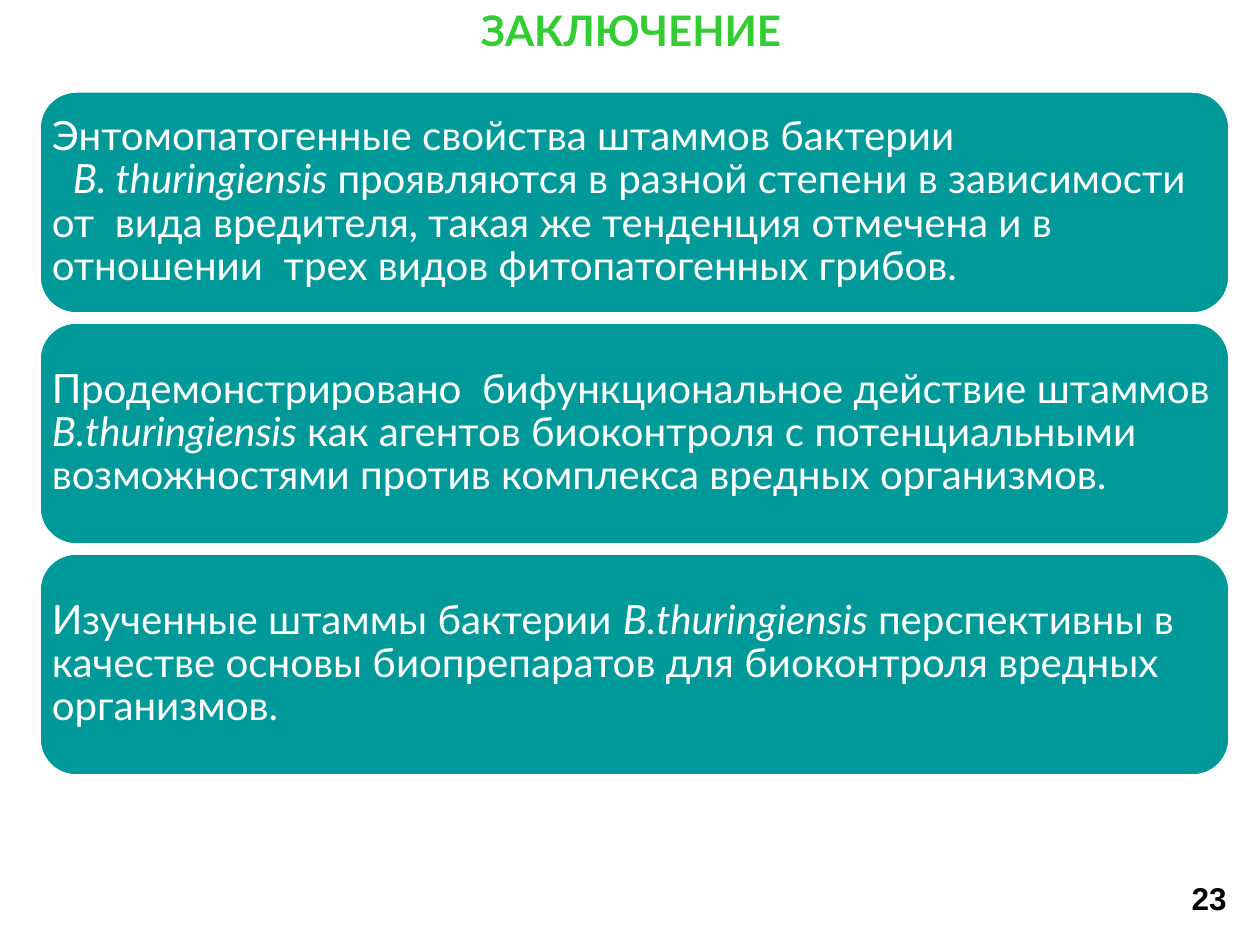
from pptx import Presentation
from pptx import util as u
from pptx.dml.color import RGBColor
from pptx.enum import shapes, text

PX_PER_INCH = 126
COLORS = {"title": "33CC33", "card": "009999", "white": "FFFFFF", "number": "000000"}
CARD_LEFT, CARD_TOP, CARD_WIDTH, CARD_HEIGHT, CARD_PITCH = 39, 91, 1191, 223, 231
CONCLUSIONS = [
    [
        [("Энтомопатогенные свойства штаммов бактерии", False)],
        [
            ("B. thuringiensis ", True),
            ("проявляются в разной степени в зависимости от  вида вредителя, "
             "такая же тенденция отмечена и в отношении  трех видов "
             "фитопатогенных грибов.", False),
        ],
    ],
    [[
        ("Продемонстрировано  бифункциональное действие штаммов ", False),
        ("B.thuringiensis ", True),
        ("как агентов биоконтроля с потенциальными возможностями против "
         "комплекса вредных организмов.", False),
    ]],
    [[
        ("Изученные штаммы бактерии ", False),
        ("B.thuringiensis ", True),
        ("перспективны в качестве основы биопрепаратов для биоконтроля "
         "вредных организмов.", False),
    ]],
]


def px(value):
    return u.Emu(round(value * 914400 / PX_PER_INCH))


def color(name):
    return RGBColor.from_string(COLORS[name])


def format_run(run, name, size, color_name, bold=False, italic=False):
    run.font.name = name
    run.font.size = u.Pt(size)
    run.font.bold = bold
    run.font.italic = italic
    run.font.color.rgb = color(color_name)


def set_line(shape, wording, font, size, color_name, alignment, anchor):
    frame = shape.text_frame
    frame.text = wording
    frame.word_wrap = True
    frame.auto_size = text.MSO_AUTO_SIZE.NONE
    frame.vertical_anchor = anchor
    paragraph = frame.paragraphs[0]
    paragraph.alignment = alignment
    format_run(paragraph.runs[0], font, size, color_name, bold=True)


def add_title(slide, wording):
    title = slide.shapes.title
    title.left, title.top, title.width, title.height = map(px, (64, 0, 1134, 59))
    set_line(title, wording, "Lato", 24, "title",
             text.PP_ALIGN.CENTER, text.MSO_ANCHOR.MIDDLE)


def add_number(slide, wording):
    box = slide.shapes.add_textbox(*map(px, (945, 857, 294, 66)))
    set_line(box, wording, "Arial", 18, "number",
             text.PP_ALIGN.RIGHT, text.MSO_ANCHOR.BOTTOM)


def add_card(slide, top, paragraphs):
    card = slide.shapes.add_shape(
        shapes.MSO_SHAPE.ROUNDED_RECTANGLE,
        *map(px, (CARD_LEFT, top, CARD_WIDTH, CARD_HEIGHT)))
    card.shadow.inherit = False
    card.fill.solid()
    card.fill.fore_color.rgb = color("card")
    card.line.color.rgb = color("white")
    card.line.width = u.Pt(2)
    frame = card.text_frame
    frame.word_wrap = True
    frame.vertical_anchor = text.MSO_ANCHOR.MIDDLE
    frame.margin_left = frame.margin_right = px(2)
    frame.margin_top = frame.margin_bottom = px(2)
    for index, pieces in enumerate(paragraphs):
        paragraph = frame.add_paragraph() if index else frame.paragraphs[0]
        paragraph.alignment = text.PP_ALIGN.LEFT
        paragraph.line_spacing = 0.9
        if index:
            paragraph._p.get_or_add_pPr().set("indent", str(px(21)))
        for wording, italic in pieces:
            run = paragraph.add_run()
            run.text = wording
            format_run(run, "Lato", 23, "white", italic=italic)
    frame.paragraphs[-1].space_after = u.Pt(4)


def main():
    presentation = Presentation()
    presentation.slide_width = u.Inches(10)
    presentation.slide_height = u.Inches(7.5)
    slide = presentation.slides.add_slide(presentation.slide_layouts[5])
    add_title(slide, "ЗАКЛЮЧЕНИЕ")
    for index, paragraphs in enumerate(CONCLUSIONS):
        add_card(slide, CARD_TOP + index * CARD_PITCH, paragraphs)
    add_number(slide, "23")
    presentation.save("out.pptx")


if __name__ == "__main__":
    main()
